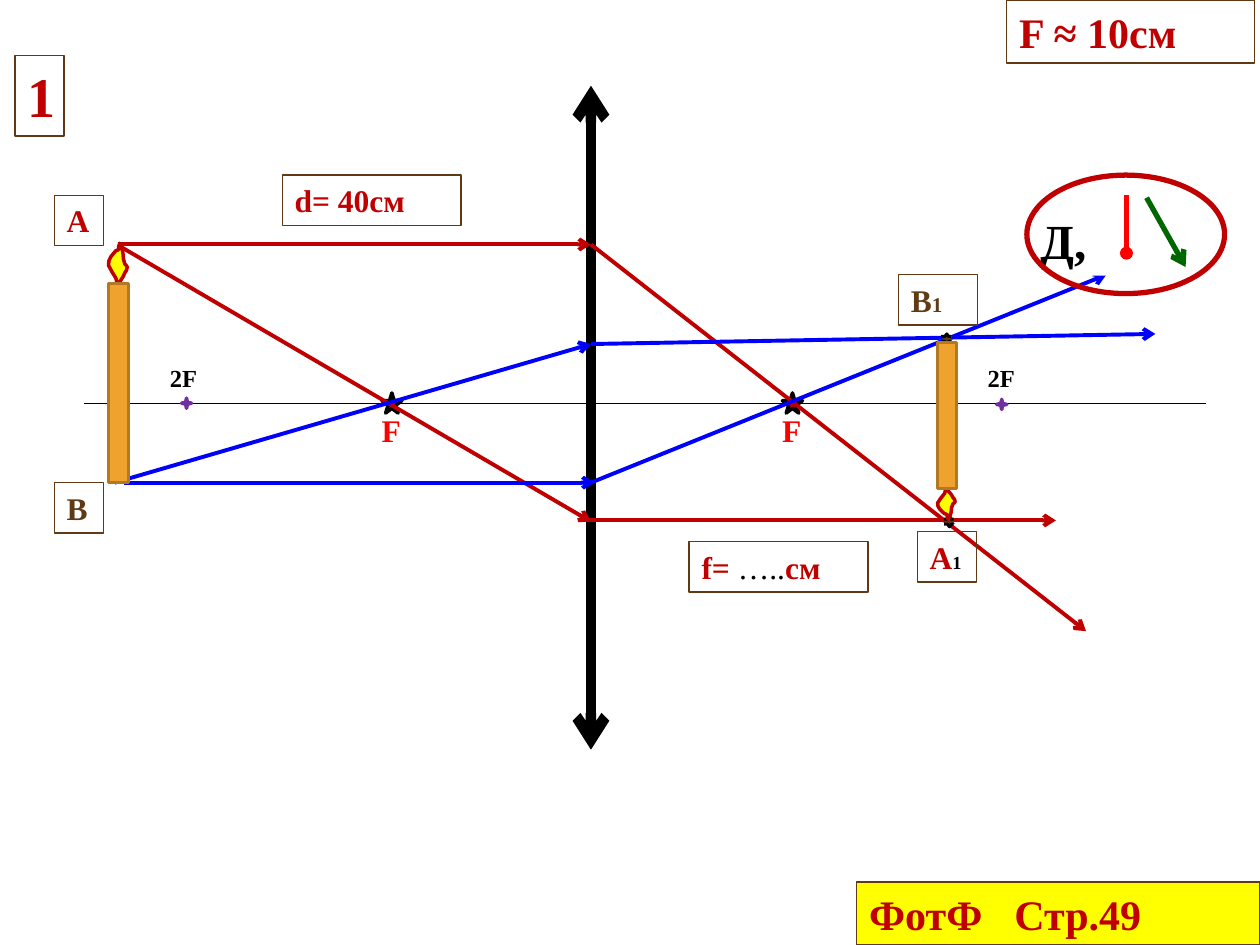
from lxml import etree
from pptx import Presentation
from pptx.dml.color import RGBColor
from pptx.enum import dml, shapes
from pptx.oxml import ns
from pptx.util import Pt

FONT = "Times New Roman"
BLACK = RGBColor(0x00, 0x00, 0x00)
WHITE = RGBColor(0xFF, 0xFF, 0xFF)
RED = RGBColor(0xFF, 0x00, 0x00)
CRIMSON = RGBColor(0xC0, 0x00, 0x00)
BLUE = RGBColor(0x00, 0x00, 0xFF)
GREEN = RGBColor(0x00, 0x66, 0x00)
PURPLE = RGBColor(0x70, 0x30, 0xA0)
BROWN = RGBColor(0x60, 0x3A, 0x14)
YELLOW = RGBColor(0xFF, 0xFF, 0x00)
ORANGE = RGBColor(0xF0, 0xA2, 0x2E)
OCHRE = RGBColor(0xB2, 0x78, 0x22)

LENS_X, AXIS_Y = 337.7, 230.4
TOP_Y, BASE_Y = 139.7, 275.8        # parallel rays from A and B
A_EXIT_Y, B_EXIT_Y = 297.4, 196.6   # focal rays leave the lens here

# start, end, colour, width, arrowhead at start, arrowhead at end
OPTICS = [
    ((LENS_X, 49), (LENS_X, 428.4), BLACK, 6, "arrow", "arrow"),
    ((48.2, AXIS_Y), (689, AXIS_Y), BLACK, 0.79, None, None),
]
RAYS = [
    ((67.7, TOP_Y), (LENS_X, TOP_Y), CRIMSON, 2.25, None, "arrow"),
    ((LENS_X, TOP_Y), (620.6, 360.7), CRIMSON, 2.25, None, "arrow"),
    ((69.1, 141.1), (LENS_X, 298.1), CRIMSON, 2.25, None, "arrow"),
    ((333.4, A_EXIT_Y), (603.4, A_EXIT_Y), CRIMSON, 2.25, None, "arrow"),
    ((70.6, BASE_Y), (339.8, BASE_Y), BLUE, 2.25, None, "arrow"),
    ((LENS_X, BASE_Y), (632.2, 157), BLUE, 2.25, None, "arrow"),
    ((65.5, BASE_Y), (LENS_X, B_EXIT_Y), BLUE, 2.25, None, "arrow"),
    ((LENS_X, B_EXIT_Y), (660.2, 190.8), BLUE, 2.25, None, "arrow"),
]
LEGEND_LINES = [
    ((643.7, 111.6), (643.7, 144.7), RED, 2.5, None, "oval"),
    ((655.2, 113), (677.5, 152.6), GREEN, 3, None, "arrow"),
]

# preset, box, fill, line colour, line width
STAR = shapes.MSO_SHAPE
FOCI = [
    (STAR.STAR_5_POINT, (218.2, 224.6, 11.5, 11.5), CRIMSON, BLACK, 2),
    (STAR.STAR_5_POINT, (447.1, 224.6, 11.5, 11.5), CRIMSON, BLACK, 2),
    (STAR.STAR_4_POINT, (103.7, 227.5, 5.8, 5.8), CRIMSON, PURPLE, 2),
    (STAR.STAR_4_POINT, (569.5, 228.2, 5.8, 5.8), CRIMSON, PURPLE, 2),
]
IMAGE_POINTS = [
    (STAR.STAR_6_POINT, (539.3, 295.2, 6.5, 5.8), BROWN, BLACK, 1.75),
    (STAR.STAR_6_POINT, (537.8, 190.8, 6.5, 5.8), BROWN, BLACK, 1.75),
]

# box, fill, outline, runs of (text, size, colour, bold)
LABELS = [
    ((211, 231.1, 28.1, 28.8), None, None, [("F", 18, RED, True)]),
    ((439.9, 231.1, 28.1, 28.8), None, None, [("F", 18, RED, True)]),
    ((90, 203.8, 33.8, 24.5), None, None, [("2F", 14, BLACK, True)]),
    ((557.3, 203.8, 33.8, 24.5), None, None, [("2F", 14, BLACK, True)]),
    ((31, 111.6, 28.1, 28.8), None, BROWN, [("А", 18, CRIMSON, True)]),
    ((31, 275.8, 28.1, 28.8), None, BROWN, [("В", 18, BROWN, True)]),
    ((8.6, 31.7, 28.1, 46.1), None, BROWN, [("1", 32, CRIMSON, True)]),
    ((587.5, 116.6, 50.4, 41), WHITE, None, [("Д,", 28, BLACK, True)]),
    ((161.3, 100.1, 102.2, 28.8), None, BROWN, [("d= 40cм", 18, CRIMSON, True)]),
    ((575.3, 0, 141.8, 36), None, BROWN, [("F ≈ 10cм", 24, CRIMSON, True)]),
    ((393.8, 309.6, 102.2, 28.8), None, BROWN,
     [("f= ", 18, CRIMSON, True), ("…..", 18, BLACK, False), ("cм", 18, CRIMSON, True)]),
    ((524.2, 303.8, 33.8, 28.8), None, BROWN,
     [("А", 18, CRIMSON, True), ("1", 10.5, BLACK, True)]),
    ((513.4, 157, 45.4, 28.8), None, BROWN,
     [("В", 18, BROWN, True), ("1", 12, BROWN, True)]),
    ((489.6, 504, 230.4, 36), YELLOW, BROWN, [("ФотФ\tСтр.49", 24, CRIMSON, True)]),
]
TAB_STOP = 83

# flame box, stick box, upside down
CANDLES = [
    ((61.9, 139, 10.8, 23.5), (61.9, 162, 11.5, 113.8), False),
    ((535.7, 279.4, 10.1, 17.3), (535.7, 195.8, 10.8, 83.5), True),
]
# percent of the flame's width and height
FLAME = [
    (47, 98), (40, 85), (20, 70), (13, 64), (1, 54), (3, 43), (13, 33), (25, 26),
    (40, 18), (53, 16), (55, 8), (60, 0), (70, 9), (77, 22), (80, 38), (87, 50),
    (95, 54), (100, 58), (96, 66), (87, 72), (80, 80), (70, 87), (60, 94), (50, 100),
]


def pts(values):
    return [Pt(v) for v in values]


def paint(sp, fill, line, width):
    """Set fill and outline; None means there is none."""
    for part, colour in ((sp.fill, fill), (sp.line.fill, line)):
        if colour is None:
            part.background()
        else:
            part.solid()
            part.fore_color.rgb = colour
    if line is not None:
        sp.line.width = Pt(width)


def add_line(s, start, end, colour, width, head, tail):
    ln = s.shapes.add_connector(shapes.MSO_CONNECTOR.STRAIGHT, *pts(start + end))
    ln.line.color.rgb = colour
    ln.line.width = Pt(width)
    for tag, kind in (("a:headEnd", head), ("a:tailEnd", tail)):
        if kind:
            etree.SubElement(ln.line._get_or_add_ln(), ns.qn(tag), type=kind)
    etree.SubElement(ln._element.spPr, ns.qn("a:effectLst"))


def add_preset(parent, preset, box, fill, line, width):
    sp = parent.shapes.add_shape(preset, *pts(box))
    sp.shadow.inherit = False
    paint(sp, fill, line, width)
    return sp


def add_label(s, box, fill, line, runs):
    sp = s.shapes.add_textbox(*pts(box))
    paint(sp, fill, line, 0.75)
    tf = sp.text_frame
    tf.word_wrap = True
    p = tf.paragraphs[0]
    for content, size, colour, bold in runs:
        r = p.add_run()
        r.text = content
        r.font.name, r.font.size, r.font.bold = FONT, Pt(size), bold
        r.font.color.rgb = colour
        if "\t" in content:
            tabs = etree.SubElement(p._p.get_or_add_pPr(), ns.qn("a:tabLst"))
            etree.SubElement(tabs, ns.qn("a:tab"), pos=str(Pt(TAB_STOP)), algn="l")


def add_candle(s, flame_box, stick_box, upside_down):
    group = s.shapes.add_group_shape()
    x, y, w, h = flame_box
    outline = [(Pt(x + w * u / 100), Pt(y + h * (100 - v if upside_down else v) / 100))
               for u, v in FLAME]
    builder = group.shapes.build_freeform(*outline[0])
    builder.add_line_segments(outline[1:], close=True)
    flame = builder.convert_to_shape()
    flame.shadow.inherit = False
    paint(flame, YELLOW, CRIMSON, 2)
    add_preset(group, shapes.MSO_SHAPE.RECTANGLE, stick_box, ORANGE, OCHRE, 2)


def main():
    prs = Presentation()
    prs.slide_width, prs.slide_height = Pt(720), Pt(540)
    s = prs.slides.add_slide(prs.slide_layouts[6])
    for line in OPTICS:
        add_line(s, *line)
    for star in FOCI:
        add_preset(s, *star)
    for ray in RAYS:
        add_line(s, *ray)
    for star in IMAGE_POINTS:
        add_preset(s, *star).line.dash_style = dml.MSO_LINE.DASH
    for label in LABELS:
        add_label(s, *label)
    for line in LEGEND_LINES:
        add_line(s, *line)
    add_preset(s, shapes.MSO_SHAPE.OVAL, (586.8, 100.1, 113, 67.7), None, CRIMSON, 3)
    for candle in CANDLES:
        add_candle(s, *candle)
    prs.save("out.pptx")


if __name__ == "__main__":
    main()
